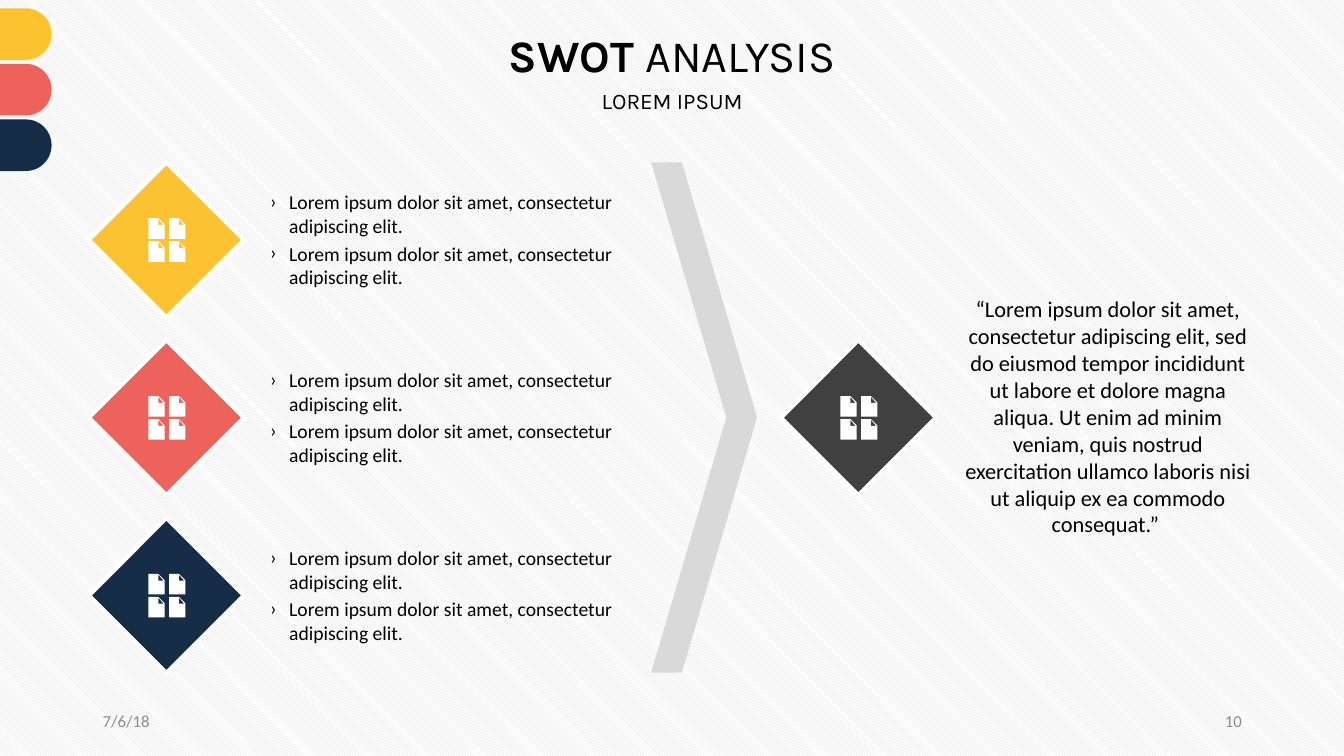
from lxml import etree
from pptx import Presentation, util as u
from pptx.dml.color import RGBColor
from pptx.enum import dml, shapes, text
from pptx.oxml import ns

YELLOW, RED, NAVY, CHARCOAL = "FCC230", "ED625B", "152D47", "404040"
GREY, WHITE, BLACK, MUTED = "D9D9D9", "FFFFFF", "000000", "8C8C8C"
LEFT, CENTER, RIGHT = text.PP_ALIGN.LEFT, text.PP_ALIGN.CENTER, text.PP_ALIGN.RIGHT
SENTENCE = "Lorem ipsum dolor sit amet, consectetur adipiscing elit."
QUOTE = (
    "“Lorem ipsum dolor sit amet, consectetur adipiscing elit, sed do eiusmod "
    "tempor incididunt ut labore et dolore magna aliqua. Ut enim ad minim veniam, "
    "quis nostrud exercitation ullamco laboris nisi ut aliquip ex ea commodo consequat.” "
)


def paint(fill, fore, back=None):
    """Fill solidly, or with thin diagonal stripes when a back colour is given."""
    if back:
        fill.patterned()
        fill.pattern = dml.MSO_PATTERN.LIGHT_DOWNWARD_DIAGONAL
        fill.back_color.rgb = RGBColor.from_string(back)
    else:
        fill.solid()
    fill.fore_color.rgb = RGBColor.from_string(fore)


def write_text(box, area, lines, size, name="Calibri", align=LEFT, inset=0, color=BLACK):
    """Place the box at area (left, top, width, height in cm) and return its paragraphs."""
    box.left, box.top, box.width, box.height = map(u.Cm, area)
    frame = box.text_frame
    frame.word_wrap = True
    frame.auto_size = text.MSO_AUTO_SIZE.NONE
    frame.vertical_anchor = text.MSO_ANCHOR.MIDDLE
    frame.margin_left = frame.margin_right = u.Cm(inset)
    frame.margin_top = frame.margin_bottom = u.Cm(inset / 2)
    frame.text = "\n".join(lines)
    for para in frame.paragraphs:
        para.alignment = align
        para.font.size = u.Pt(size)
        para.font.name = name
        paint(para.font.fill, color)
    return frame.paragraphs


deck = Presentation()
deck.slide_width, deck.slide_height = u.Cm(33.87), u.Cm(19.05)
page = deck.slides.add_slide(deck.slide_layouts[5])
paint(page.background.fill, GREY, WHITE)

# Corner tabs
for row, color in enumerate((YELLOW, RED, NAVY)):
    tab = page.shapes.add_shape(
        shapes.MSO_SHAPE.ROUND_2_SAME_RECTANGLE,
        0, u.Cm(0.21 + 1.4 * row), u.Cm(1.3), u.Cm(1.3))
    tab.adjustments[0] = 0.5
    tab.rotation = 90
    tab.shadow.inherit = False
    paint(tab.fill, color)
    tab.line.fill.background()

# Headings
title = write_text(page.shapes.title, (5, 0.86, 23.88, 1.22), [""], 32, "Karla", CENTER)[0]
title.line_spacing = 0.9
for word, bold in (("SWOT ", True), ("ANALYSIS", False)):
    span = title.add_run()
    span.text = word
    span.font.bold = bold
subtitle = write_text(page.shapes.add_textbox(0, 0, 0, 0), (5, 2.26, 23.88, 0.61),
                      ["LOREM IPSUM"], 16, "Karla", CENTER)[0]
subtitle.line_spacing = 0.9

# Footer
for left, label, align in ((2.34, "7/6/18", LEFT), (23.93, "10", RIGHT)):
    write_text(page.shapes.add_textbox(0, 0, 0, 0), (left, 17.65, 7.62, 1.02),
               [label], 12, align=align, inset=0.25, color=MUTED)

# Diamonds, each with a two-by-two icon of folded sheets drawn in hundredths of a cm
FIRST_TOP, ROW_STEP, DIAMOND = 4.09, 4.48, 3.91
SHEET = [(25, 0), (41, 16), (41, 52), (0, 52)]
FOLD = [(25, 2), (38, 17)]
for left, row, color in ((2.24, 0, YELLOW), (2.24, 1, RED), (2.24, 2, NAVY), (19.68, 1, CHARCOAL)):
    top = FIRST_TOP + ROW_STEP * row
    diamond = page.shapes.add_shape(
        shapes.MSO_SHAPE.DIAMOND, u.Cm(left), u.Cm(top), u.Cm(DIAMOND), u.Cm(DIAMOND))
    diamond.shadow.inherit = False
    paint(diamond.fill, color)
    paint(diamond.line.fill, WHITE)
    diamond.line.width = u.Pt(3)
    for cell in range(4):
        outline = page.shapes.build_freeform(0, 0, scale=u.Cm(0.01))
        outline.add_line_segments(SHEET)
        outline.move_to(25, 17)
        outline.add_line_segments(FOLD)
        sheet = outline.convert_to_shape(
            u.Cm(left + 1.5 + 0.52 * (cell % 2)), u.Cm(top + 1.41 + 0.58 * (cell // 2)))
        sheet.shadow.inherit = False
        paint(sheet.fill, WHITE)
        sheet.line.fill.background()

# Bulleted points beside the left diamonds
for row in range(3):
    points = write_text(page.shapes.add_textbox(0, 0, 0, 0),
                        (6.81, FIRST_TOP + 0.7 + ROW_STEP * row, 8.99, 2.49), [SENTENCE] * 2, 14)
    for para in points:
        para.space_before = u.Pt(3)
        properties = para._p.get_or_add_pPr()
        properties.set("marL", str(u.Cm(0.48)))
        properties.set("indent", str(-u.Cm(0.48)))
        defaults = properties.find(ns.qn("a:defRPr"))
        defaults.addprevious(etree.Element(ns.qn("a:buFont"), typeface="Calibri"))
        defaults.addprevious(etree.Element(ns.qn("a:buChar"), char="›"))

# Chevron leading to the quote
chevron = page.shapes.add_shape(
    shapes.MSO_SHAPE.CHEVRON, u.Cm(16.41), u.Cm(FIRST_TOP), u.Cm(2.67), u.Cm(12.86))
chevron.adjustments[0] = 0.71
chevron.shadow.inherit = False
paint(chevron.fill, GREY)
chevron.line.fill.background()
write_text(page.shapes.add_textbox(0, 0, 0, 0), (24.21, 7.42, 7.42, 6.15), [QUOTE], 16, align=CENTER)

deck.save("out.pptx")
